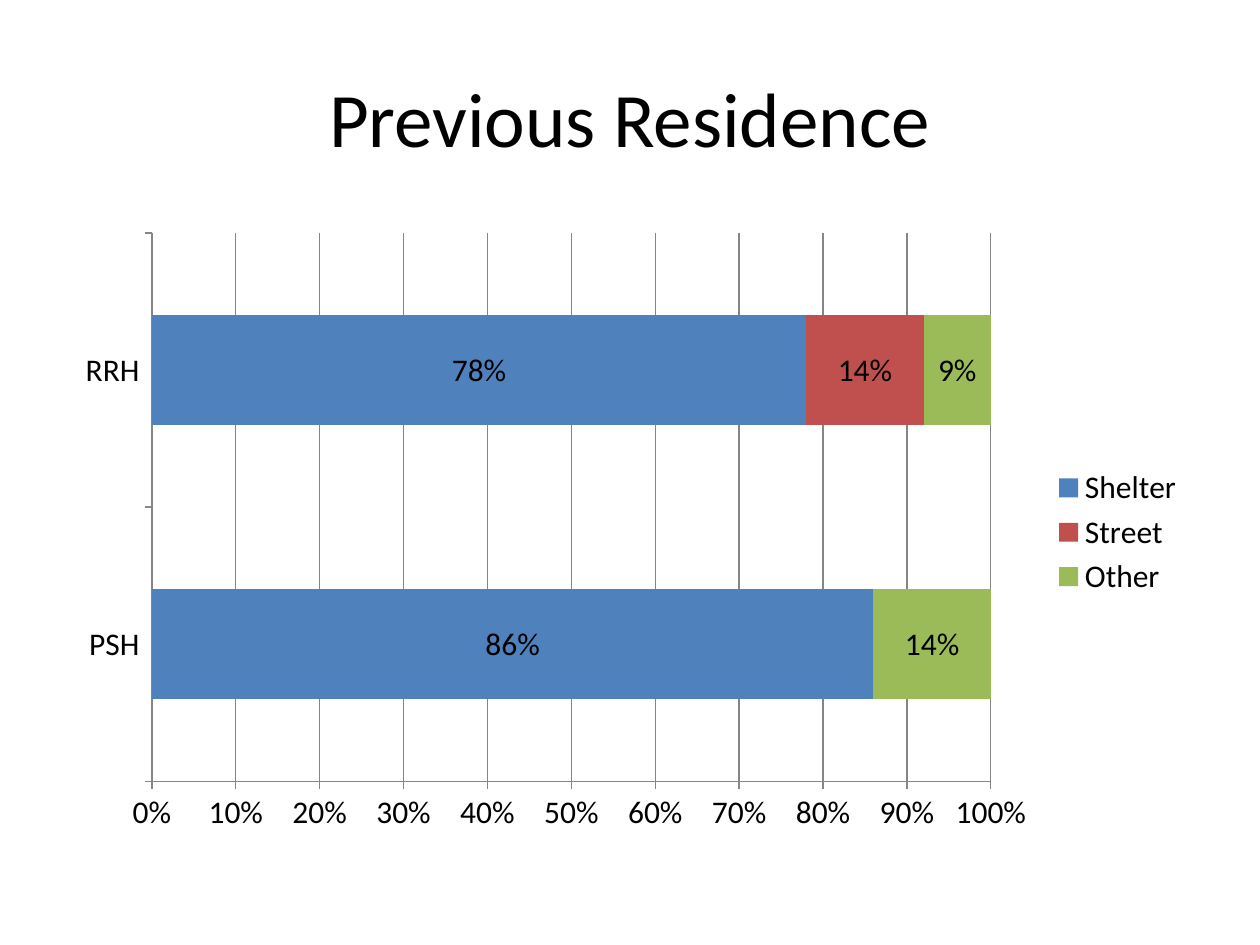
"""Build the Previous Residence slide with a stacked bar chart."""
from dataclasses import dataclass

from pptx import Presentation
from pptx.chart.data import CategoryChartData
from pptx.dml.color import RGBColor
from pptx.enum import chart as charts, text
from pptx.util import Inches, Pt


@dataclass(frozen=True)
class Theme:
    font: str = "Calibri"
    ink: str = "000000"
    paper: str = "FFFFFF"
    grid: str = "868686"
    series: tuple = ("4F81BD", "C0504D", "9BBB59")
    title_size: int = 44
    chart_size: int = 18


def style_font(font, *, name, size, color):
    font.name = name
    font.size = Pt(size)
    font.color.rgb = RGBColor.from_string(color)


def write_text(frame, content, *, align, anchor, **font_format):
    frame.word_wrap = True
    frame.vertical_anchor = anchor
    para = frame.paragraphs[0]
    para.alignment = align
    span = para.add_run()
    span.text = content
    style_font(span.font, **font_format)


class SlideBuilder:
    def __init__(self, deck, theme):
        self.theme = theme
        self.page = deck.slides.add_slide(deck.slide_layouts[5])
        fill = self.page.background.fill
        fill.solid()
        fill.fore_color.rgb = RGBColor.from_string(theme.paper)

    def title(self, content, left, top, width, height):
        box = self.page.shapes.title
        box.left, box.top = Inches(left), Inches(top)
        box.width, box.height = Inches(width), Inches(height)
        write_text(box.text_frame, content, align=text.PP_ALIGN.CENTER,
                   anchor=text.MSO_ANCHOR.MIDDLE, name=self.theme.font,
                   size=self.theme.title_size, color=self.theme.ink)

    def stacked_bars(self, categories, series, left, top, width, height):
        data = CategoryChartData(number_format="0%")
        data.categories = categories
        for name, values in series.items():
            data.add_series(name, values)
        chart = self.page.shapes.add_chart(
            charts.XL_CHART_TYPE.BAR_STACKED, Inches(left), Inches(top),
            Inches(width), Inches(height), data).chart
        style_font(chart.font, name=self.theme.font,
                   size=self.theme.chart_size, color=self.theme.ink)
        chart.has_title = False
        chart.has_legend = True
        chart.legend.position = charts.XL_LEGEND_POSITION.RIGHT
        chart.legend.include_in_layout = False
        self.format_axes(chart)
        self.format_bars(chart.plots[0])

    def format_axes(self, chart):
        values = chart.value_axis
        values.minimum_scale, values.maximum_scale = 0, 1
        values.major_unit = 0.1
        values.has_major_gridlines = True
        values.tick_labels.number_format = "0%"
        values.tick_labels.number_format_is_linked = False
        for axis in (chart.category_axis, values):
            axis.major_tick_mark = charts.XL_TICK_MARK.OUTSIDE
            axis.minor_tick_mark = charts.XL_TICK_MARK.NONE
        for item in (chart.category_axis, values, values.major_gridlines):
            item.format.line.color.rgb = RGBColor.from_string(self.theme.grid)
            item.format.line.width = Pt(0.75)

    def format_bars(self, plot):
        plot.gap_width, plot.overlap = 150, 100
        plot.vary_by_categories = False
        for bars, color in zip(plot.series, self.theme.series):
            bars.format.fill.solid()
            bars.format.fill.fore_color.rgb = RGBColor.from_string(color)
            labels = bars.data_labels
            labels.show_value = True
            labels.number_format = "0%;;"
            labels.number_format_is_linked = False


def main():
    deck = Presentation()
    deck.slide_width, deck.slide_height = Inches(10), Inches(7.5)
    slide = SlideBuilder(deck, Theme())
    slide.title("Previous Residence", 0.5, 0.3, 9, 1.25)
    residences = {
        "Shelter": (0.86, 0.78),
        "Street": (0, 0.14),
        "Other": (0.14, 0.09),
    }
    slide.stacked_bars(("PSH", "RRH"), residences, 0.5, 1.75, 9, 4.95)
    deck.save("out.pptx")


if __name__ == "__main__":
    main()
